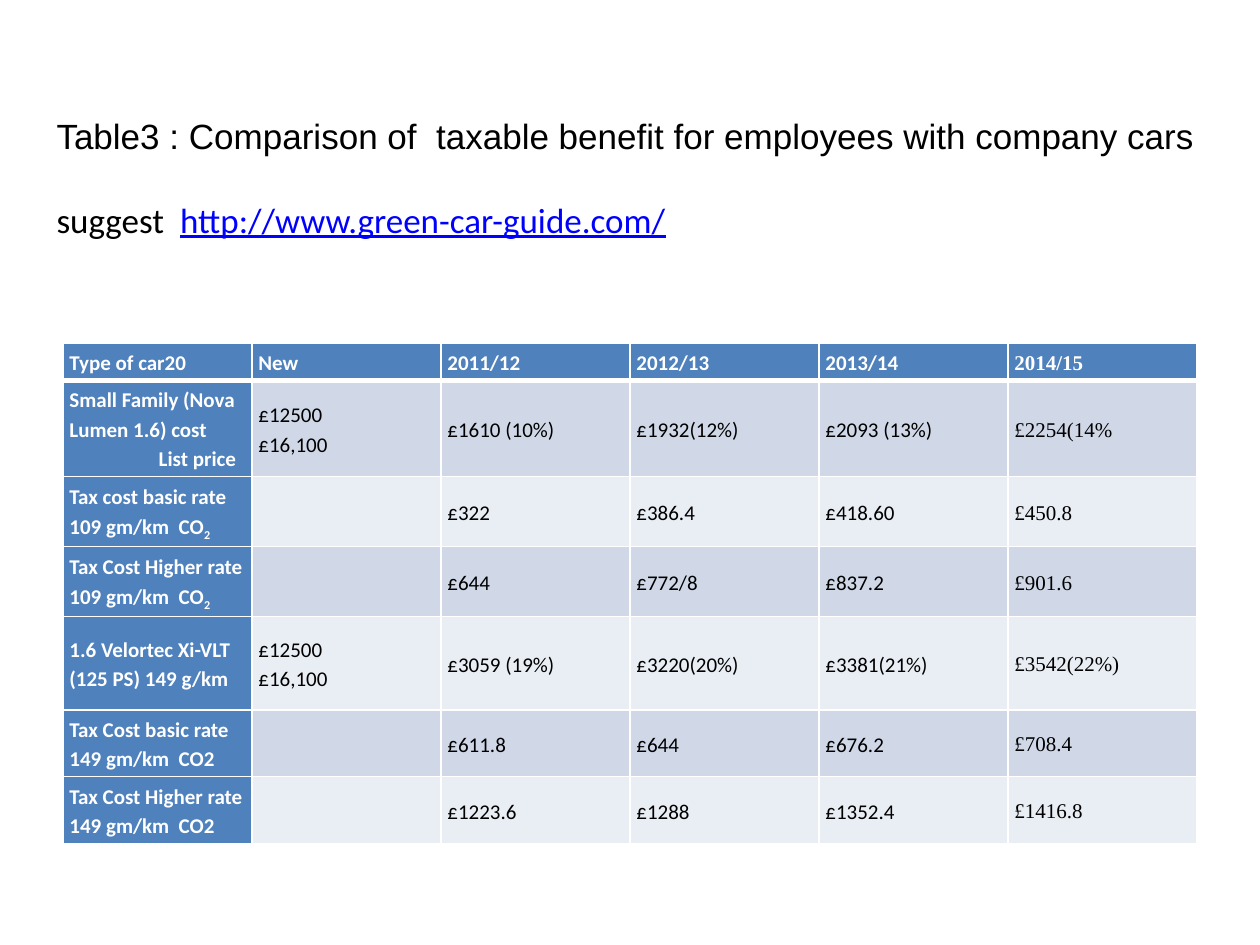
"""Build a slide comparing the taxable benefit of company cars."""
from dataclasses import dataclass

from lxml.etree import SubElement
from pptx import Presentation
from pptx.dml.color import RGBColor
from pptx.enum.text import MSO_ANCHOR, MSO_AUTO_SIZE
from pptx.oxml.ns import qn
from pptx.util import Cm, Pt


@dataclass(frozen=True)
class Theme:
    white: str = "FFFFFF"
    black: str = "000000"
    link: str = "0000FF"
    accent: str = "4F81BD"
    bands: tuple[str, str] = ("D0D8E8", "E9EDF4")
    sans: str = "Calibri"
    serif: str = "Times New Roman"
    heading: str = "Arial"
    title_size: int = 20
    table_size: int = 12
    line_spacing: float = 1.15
    thin_rule: int = 1
    thick_rule: int = 3


@dataclass(frozen=True)
class Span:
    text: str
    subscript: bool = False
    underline: bool = False


@dataclass(frozen=True)
class Line:
    spans: tuple[Span, ...]
    indent: float = 0
    tab: float = 0


@dataclass(frozen=True)
class CarRow:
    height: float
    label: tuple[Line, ...]
    prices: tuple[str, ...]
    years: tuple[str, str, str, str]


THEME = Theme()
LIST_PRICES = ("£12500", "£16,100")


def line(*texts: str, indent: float = 0, tab: float = 0) -> Line:
    """Make a line whose second text, if any, is a subscript."""
    spans = tuple(Span(text, subscript=place > 0) for place, text in enumerate(texts))
    return Line(spans, indent, tab)


HEADINGS = ("Type of car20", "New", "2011/12", "2012/13", "2013/14", "2014/15")
HEADER_HEIGHT = 0.72
CAR_ROWS = (
    CarRow(1.85, (line("Small Family (Nova Lumen 1.6) cost"), line("List price", indent=1.8)),
           LIST_PRICES, ("£1610 (10%)", "£1932(12%)", "£2093 (13%)", "£2254(14%")),
    CarRow(1.38, (line("Tax cost basic rate 109 gm/km  CO", "2"),),
           (), ("£322", "£386.4", "£418.60", "£450.8")),
    CarRow(1.38, (line("Tax Cost Higher rate 109 gm/km  CO", "2"),),
           (), ("£644", "£772/8", "£837.2", "£901.6")),
    CarRow(1.88, (line("1.6 Velortec Xi-VLT\t(125 PS) 149 g/km", tab=1.15),),
           LIST_PRICES, ("£3059 (19%)", "£3220(20%)", "£3381(21%)", "£3542(22%)")),
    CarRow(1.32, (line("Tax Cost basic rate 149 gm/km  CO2"),),
           (), ("£611.8", "£644", "£676.2", "£708.4")),
    CarRow(1.32, (line("Tax Cost Higher rate 149 gm/km  CO2"),),
           (), ("£1223.6", "£1288", "£1352.4", "£1416.8")),
)


def add_span(para, span: Span, font: str, size: int, color: str, bold: bool = False) -> None:
    """Add one formatted run to a paragraph."""
    run = para.add_run()
    run.text = span.text
    run.font.name = font
    run.font.size = Pt(size)
    run.font.bold = bold
    run.font.underline = span.underline
    run.font.color.rgb = RGBColor.from_string(color)
    if span.subscript:
        run.font._element.set("baseline", "-25000")


def set_borders(cell, top: int, bottom: int) -> None:
    """Rule all four sides of a cell in white."""
    properties = cell._tc.get_or_add_tcPr()
    widths = {"L": THEME.thin_rule, "R": THEME.thin_rule, "T": top, "B": bottom}
    for side, width in widths.items():
        rule = SubElement(properties, qn(f"a:ln{side}"), w=str(Pt(width)))
        fill = SubElement(rule, qn("a:solidFill"))
        SubElement(fill, qn("a:srgbClr"), val=THEME.white)


def fill_cell(cell, lines: tuple[Line, ...], row: int, column: int) -> None:
    """Style a table cell by its place and write its lines."""
    is_head = row == 0 or column == 0
    set_borders(cell, THEME.thick_rule if row == 1 else THEME.thin_rule,
                THEME.thick_rule if row == 0 else THEME.thin_rule)
    cell.fill.solid()
    fill = THEME.accent if is_head else THEME.bands[(row - 1) % 2]
    cell.fill.fore_color.rgb = RGBColor.from_string(fill)
    cell.vertical_anchor = MSO_ANCHOR.MIDDLE
    cell.margin_left = cell.margin_right = Cm(0.13)
    cell.margin_top = cell.margin_bottom = Cm(0.08)
    font = THEME.serif if column == len(HEADINGS) - 1 else THEME.sans
    color = THEME.white if is_head else THEME.black
    frame = cell.text_frame
    for place, content in enumerate(lines):
        para = frame.add_paragraph() if place else frame.paragraphs[0]
        para.line_spacing = THEME.line_spacing
        properties = para._p.get_or_add_pPr()
        if content.indent:
            properties.set("marL", str(Cm(content.indent)))
        if content.tab:
            tabs = SubElement(properties, qn("a:tabLst"))
            SubElement(tabs, qn("a:tab"), pos=str(Cm(content.tab)), algn="l")
        for span in content.spans:
            add_span(para, span, font, THEME.table_size, color, is_head)
    if not lines:
        frame.paragraphs[0].font.size = Pt(THEME.table_size)


def add_title(page) -> None:
    """Write the table caption and its web source."""
    box = page.shapes.add_textbox(Cm(0.89), Cm(2.16), Cm(23.62), Cm(2.82))
    frame = box.text_frame
    frame.word_wrap = False
    frame.auto_size = MSO_AUTO_SIZE.SHAPE_TO_FIT_TEXT
    frame.vertical_anchor = MSO_ANCHOR.MIDDLE
    caption = Span("Table3 : Comparison of  taxable benefit for employees with company cars")
    add_span(frame.paragraphs[0], caption, THEME.heading, THEME.title_size, THEME.black)
    source = frame.add_paragraph()
    source.space_before = Pt(24)
    add_span(source, Span("suggest  "), THEME.sans, THEME.title_size, THEME.black)
    address = Span("http://www.green-car-guide.com/", underline=True)
    add_span(source, address, THEME.sans, THEME.title_size, THEME.link)


def add_tax_table(page) -> None:
    """Draw the table of prices and tax costs."""
    heights = [HEADER_HEIGHT, *(car.height for car in CAR_ROWS)]
    contents = [[(line(heading),) for heading in HEADINGS]]
    for car in CAR_ROWS:
        prices = tuple(line(price) for price in car.prices)
        contents.append([car.label, prices, *((line(year),) for year in car.years)])
    table = page.shapes.add_table(len(heights), len(HEADINGS), Cm(1.27), Cm(6.91),
                                  Cm(22.86), Cm(sum(heights))).table
    table.horz_banding = False
    for row, height in enumerate(heights):
        table.rows[row].height = Cm(height)
        for column, lines in enumerate(contents[row]):
            fill_cell(table.cell(row, column), lines, row, column)


def main() -> None:
    """Build and save the deck."""
    deck = Presentation()
    deck.slide_width, deck.slide_height = Cm(25.4), Cm(19.05)
    page = deck.slides.add_slide(deck.slide_layouts[6])
    add_tax_table(page)
    add_title(page)
    deck.save("out.pptx")


if __name__ == "__main__":
    main()
